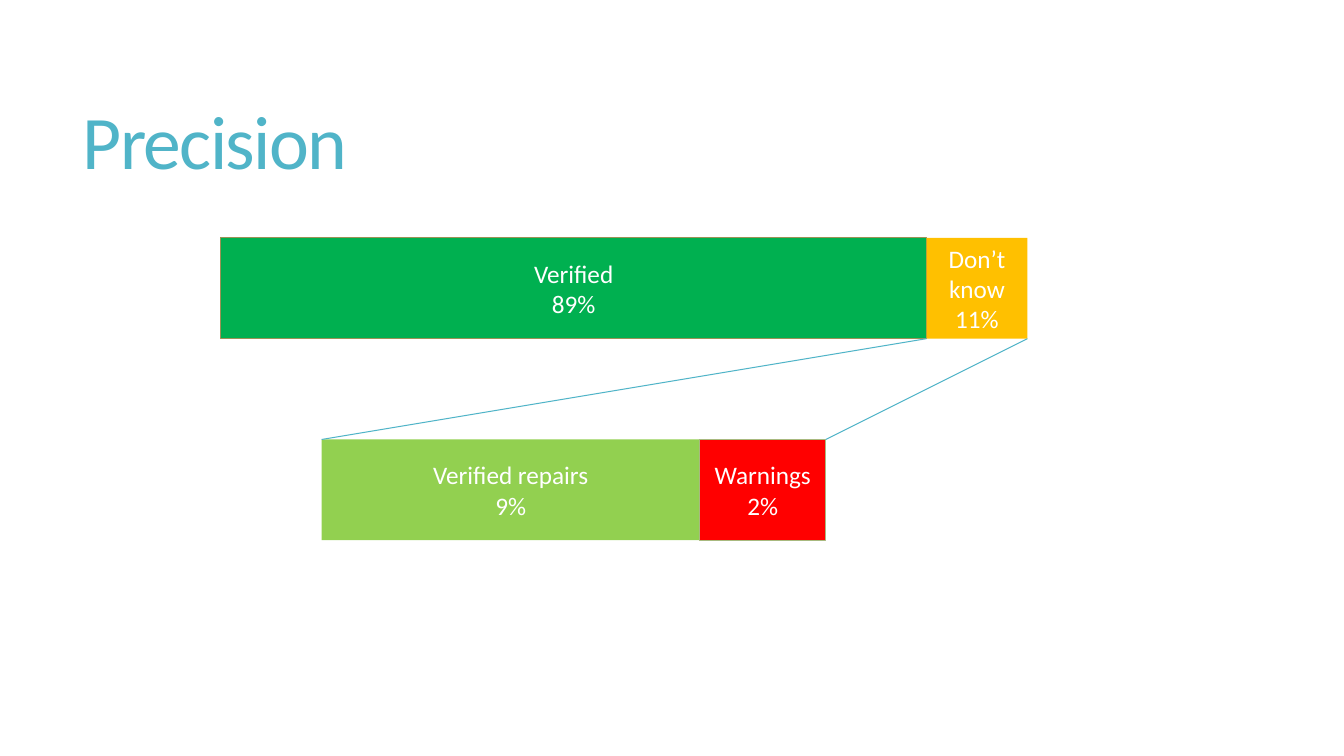
from pptx import Presentation
from pptx import util as u
from pptx.dml.color import RGBColor
from pptx.enum import shapes, text
from pptx.oxml.ns import qn
from lxml import etree

PX = 9144
THEME = {
    "font": "Calibri", "title_size": 54, "label_size": 18, "line_width": 0.75,
    "accent": "50B4C8", "label": "FFFFFF",
    "verified": "00B050", "verified_edge": "9B9256", "unknown": "FFC000",
    "repairs": "92D050", "warnings": "FF0000", "warnings_edge": "A8B97F",
}


def color(key):
    return RGBColor.from_string(THEME[key])


def add_run(paragraph, words, size, ink):
    run = paragraph.add_run()
    run.text = words
    run.font.name = THEME["font"]
    run.font.size = u.Pt(THEME[size])
    run.font.color.rgb = color(ink)
    return run


deck = Presentation()
deck.slide_width, deck.slide_height = 1333 * PX, 750 * PX
slide = deck.slides.add_slide(deck.slide_layouts[5])

title = slide.shapes.title
title.left, title.top, title.width, title.height = (n * PX for n in (72, 55, 1178, 181))
title.text_frame.auto_size = text.MSO_AUTO_SIZE.NONE
title.text_frame.vertical_anchor = text.MSO_ANCHOR.MIDDLE
heading = title.text_frame.paragraphs[0]
heading.alignment = text.PP_ALIGN.LEFT
heading.line_spacing = 0.85
heading_run = add_run(heading, "Precision", "title_size", "accent")
heading_run.font._element.set("spc", "-120")

BAR_HEIGHT = 100
TOTAL_TOP, DETAIL_TOP = 236, 436
bars = [
    (219, TOTAL_TOP, [("Verified", "89%", 700, "verified", "verified_edge"),
                      ("Don’t know", "11%", 100, "unknown", None)]),
    (319, DETAIL_TOP, [("Verified repairs", "9%", 375, "repairs", None),
                       ("Warnings", "2%", 125, "warnings", "warnings_edge")]),
]

for left, top, segments in bars:
    for category, share, width, fill, edge in segments:
        segment = slide.shapes.add_shape(
            shapes.MSO_SHAPE.RECTANGLE, left * PX, top * PX, width * PX, BAR_HEIGHT * PX)
        segment.shadow.inherit = False
        segment.fill.solid()
        segment.fill.fore_color.rgb = color(fill)
        if edge:
            segment.line.color.rgb = color(edge)
            segment.line.width = u.Pt(THEME["line_width"])
        else:
            segment.line.fill.background()
        label = segment.text_frame
        label.word_wrap = True
        label.vertical_anchor = text.MSO_ANCHOR.MIDDLE
        for paragraph, words in ((label.paragraphs[0], category), (label.add_paragraph(), share)):
            paragraph.alignment = text.PP_ALIGN.CENTER
            add_run(paragraph, words, "label_size", "label")
        left += width

for detail_x, total_x in ((319, 919), (819, 1019)):
    zoom_line = slide.shapes.add_connector(
        shapes.MSO_CONNECTOR.STRAIGHT, detail_x * PX, DETAIL_TOP * PX,
        total_x * PX, (TOTAL_TOP + BAR_HEIGHT) * PX)
    zoom_line.line.color.rgb = color("accent")
    zoom_line.line.width = u.Pt(THEME["line_width"])
    etree.SubElement(zoom_line._element.spPr, qn("a:effectLst"))

deck.save("out.pptx")
